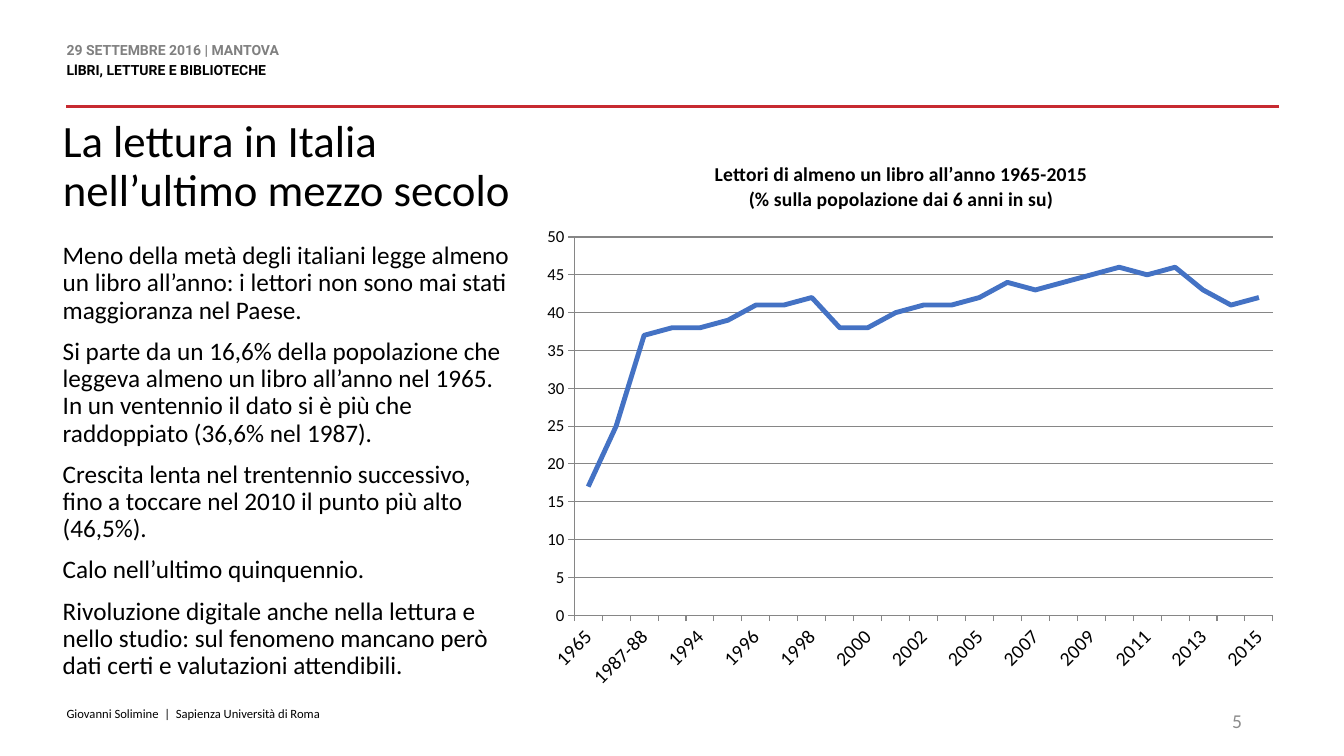
"""Build a slide on book reading in Italy, with commentary beside a line chart."""

import dataclasses
import typing

import lxml.etree
import pptx
import pptx.chart.axis
import pptx.chart.chart
import pptx.chart.data
import pptx.dml.color
import pptx.enum.chart
import pptx.enum.shapes
import pptx.enum.text
import pptx.oxml
import pptx.oxml.ns
import pptx.slide
import pptx.util

RGB = pptx.dml.color.RGBColor
ALIGN = pptx.enum.text.PP_ALIGN
ANCHOR = pptx.enum.text.MSO_ANCHOR
SLIDE_WIDTH = pptx.util.Inches(13.33)
SLIDE_HEIGHT = pptx.util.Inches(7.5)


@dataclasses.dataclass(frozen=True)
class Theme:
    black: RGB = RGB(0, 0, 0)
    header_gray: RGB = RGB(0x80, 0x80, 0x80)
    number_gray: RGB = RGB(0x8C, 0x8C, 0x8C)
    grid_gray: RGB = RGB(0x86, 0x86, 0x86)
    red: RGB = RGB(0xC7, 0x2A, 0x31)
    blue: RGB = RGB(0x44, 0x72, 0xC4)
    body_font: str = "Calibri"
    header_font: str = "Roboto"
    title_size: float = 32
    body_size: float = 18
    label_size: float = 14
    value_size: float = 12
    header_size: float = 10
    footer_size: float = 9


THEME = Theme()


class Area(typing.NamedTuple):
    """Percentages of the slide's width and height."""

    left: float
    top: float
    width: float
    height: float

    def lengths(self) -> tuple[int, int, int, int]:
        return (
            round(SLIDE_WIDTH * self.left / 100),
            round(SLIDE_HEIGHT * self.top / 100),
            round(SLIDE_WIDTH * self.width / 100),
            round(SLIDE_HEIGHT * self.height / 100),
        )


@dataclasses.dataclass(frozen=True)
class TextBlock:
    area: Area
    paragraphs: tuple[str, ...]
    size: float
    colors: tuple[RGB, ...] = (THEME.black,)
    font: str = THEME.body_font
    bold: bool = False
    line_spacing: float | pptx.util.Length = 1.0
    gap: float = 0
    align: ALIGN = ALIGN.LEFT
    anchor: ANCHOR = ANCHOR.TOP
    side_inset: float = 0
    bottom_inset: float = 0


TEXT_BLOCKS = (
    TextBlock(
        Area(4.95, 5.73, 41.4, 6.8),
        ("29 SETTEMBRE 2016 | MANTOVA", "LlBRI, LETTURE E BIBLIOTECHE"),
        THEME.header_size,
        colors=(THEME.header_gray, THEME.black),
        font=THEME.header_font,
        bold=True,
        line_spacing=pptx.util.Pt(11),
        gap=3,
    ),
    TextBlock(
        Area(4.67, 15.73, 41.63, 17.87),
        ("La lettura in Italia\vnell’ultimo mezzo secolo",),
        THEME.title_size,
        line_spacing=0.9,
    ),
    TextBlock(
        Area(4.67, 32.13, 33.38, 51.2),
        (
            "Meno della metà degli italiani legge almeno un libro all’anno: "
            "i lettori non sono mai stati maggioranza nel Paese.",
            "Si parte da un 16,6% della popolazione che leggeva almeno un libro all’anno "
            "nel 1965. In un ventennio il dato si è più che raddoppiato (36,6% nel 1987).",
            "Crescita lenta nel trentennio successivo, fino a toccare nel 2010 "
            "il punto più alto (46,5%).",
            "Calo nell’ultimo quinquennio.",
            "Rivoluzione digitale anche nella lettura e nello studio: sul fenomeno "
            "mancano però dati certi e valutazioni attendibili.",
        ),
        THEME.body_size,
        line_spacing=0.9,
        gap=10,
    ),
    TextBlock(
        Area(4.95, 92.67, 61.95, 5.33),
        ("Giovanni Solimine  |  Sapienza Università di Roma",),
        THEME.footer_size,
        anchor=ANCHOR.MIDDLE,
        bottom_inset=0.15,
    ),
    TextBlock(
        Area(70.65, 92.67, 22.5, 5.33),
        ("5",),
        THEME.label_size,
        colors=(THEME.number_gray,),
        align=ALIGN.RIGHT,
        anchor=ANCHOR.MIDDLE,
        side_inset=0.1,
    ),
)

RULE = Area(4.95, 14.13, 90.23, 0)
CHART_AREA = Area(39.6, 18.53, 56.33, 74.13)
CHART_TITLE = "Lettori di almeno un libro all’anno 1965-2015\n(% sulla popolazione dai 6 anni in su)"
READERS = {
    "1965": 17, "1973": 25, "1987-88": 37, "1993": 38, "1994": 38,
    "1995": 39, "1996": 41, "1997": 41, "1998": 42, "1999": 38,
    "2000": 38, "2001": 40, "2002": 41, "2003": 41, "2005": 42,
    "2006": 44, "2007": 43, "2008": 44, "2009": 45, "2010": 46,
    "2011": 45, "2012": 46, "2013": 43, "2014": 41, "2015": 42,
}


def add_text(slide: pptx.slide.Slide, block: TextBlock) -> None:
    frame = slide.shapes.add_textbox(*block.area.lengths()).text_frame
    frame.word_wrap = True
    frame.vertical_anchor = block.anchor
    frame.margin_left = frame.margin_right = pptx.util.Inches(block.side_inset)
    frame.margin_top = 0
    frame.margin_bottom = pptx.util.Inches(block.bottom_inset)
    frame.text = "\n".join(block.paragraphs)
    for index, paragraph in enumerate(frame.paragraphs):
        paragraph.alignment = block.align
        paragraph.line_spacing = block.line_spacing
        paragraph.space_before = pptx.util.Pt(block.gap if index else 0)
        for run in paragraph.runs:
            run.font.name = block.font
            run.font.size = pptx.util.Pt(block.size)
            run.font.bold = block.bold
            run.font.color.rgb = block.colors[index % len(block.colors)]


def add_rule(slide: pptx.slide.Slide) -> None:
    left, top, width, height = RULE.lengths()
    rule = slide.shapes.add_connector(
        pptx.enum.shapes.MSO_CONNECTOR.STRAIGHT, left + width, top, left, top + height
    )
    rule.line.color.rgb = THEME.red
    rule.line.width = pptx.util.Pt(2)
    properties = rule._element.spPr
    lxml.etree.SubElement(properties, pptx.oxml.ns.qn("a:effectLst"))


def set_layout(parent: lxml.etree.ElementBase, index: int, **settings: float | str) -> None:
    for layout in parent.findall(pptx.oxml.ns.qn("c:layout")):
        parent.remove(layout)
    content = "".join(
        f'<c:{name} val="{value if isinstance(value, str) else value / 100}"/>'
        for name, value in settings.items()
    )
    namespace = pptx.oxml.ns.nsdecls("c")
    parent.insert(index, pptx.oxml.parse_xml(
        f"<c:layout {namespace}><c:manualLayout>{content}</c:manualLayout></c:layout>"
    ))


def style_axis(axis: pptx.chart.axis._BaseAxis, size: float, gridlines: bool) -> None:
    axis.has_major_gridlines = gridlines
    axis.major_tick_mark = pptx.enum.chart.XL_TICK_MARK.OUTSIDE
    axis.tick_labels.font.size = pptx.util.Pt(size)
    for part in (axis, axis.major_gridlines) if gridlines else (axis,):
        part.format.line.color.rgb = THEME.grid_gray
        part.format.line.width = pptx.util.Pt(0.75)


def add_readers_chart(slide: pptx.slide.Slide) -> None:
    data = pptx.chart.data.CategoryChartData()
    data.categories = list(READERS)
    data.add_series("Series 1", list(READERS.values()))
    chart: pptx.chart.chart.Chart = slide.shapes.add_chart(
        pptx.enum.chart.XL_CHART_TYPE.LINE, *CHART_AREA.lengths(), data
    ).chart
    chart.font.name = THEME.body_font
    chart.font.size = pptx.util.Pt(THEME.body_size)
    chart.font.color.rgb = THEME.black
    chart.has_legend = False
    title = chart.chart_title
    title.text_frame.text = CHART_TITLE
    for paragraph in title.text_frame.paragraphs:
        paragraph.font.name = THEME.body_font
        paragraph.font.size = pptx.util.Pt(THEME.label_size)
        paragraph.font.bold = True
        paragraph.font.color.rgb = THEME.black
    style_axis(chart.category_axis, THEME.label_size, False)
    style_axis(chart.value_axis, THEME.value_size, True)
    chart.value_axis.minimum_scale = 0
    chart.value_axis.maximum_scale = 50
    chart.value_axis.major_unit = 5
    chart.category_axis._element.txPr.bodyPr.set("rot", str(-45 * 60000))
    plot = chart.plots[0]
    plot.vary_by_categories = False
    series = plot.series[0]
    series.smooth = False
    series.marker.style = pptx.enum.chart.XL_MARKER_STYLE.NONE
    series.format.line.color.rgb = THEME.blue
    series.format.line.width = pptx.util.Pt(3.5)
    set_layout(title._element, 1, xMode="edge", yMode="edge", x=23.7, y=3.2)
    set_layout(chart._chartSpace.chart.plotArea, 0, layoutTarget="inner", xMode="edge",
               yMode="edge", x=5.55, y=17.3, w=92.3, h=67.5)


def main() -> None:
    presentation = pptx.Presentation()
    presentation.slide_width = SLIDE_WIDTH
    presentation.slide_height = SLIDE_HEIGHT
    slide = presentation.slides.add_slide(presentation.slide_layouts[6])
    add_rule(slide)
    for block in TEXT_BLOCKS:
        add_text(slide, block)
    add_readers_chart(slide)
    presentation.save("out.pptx")


if __name__ == "__main__":
    main()
